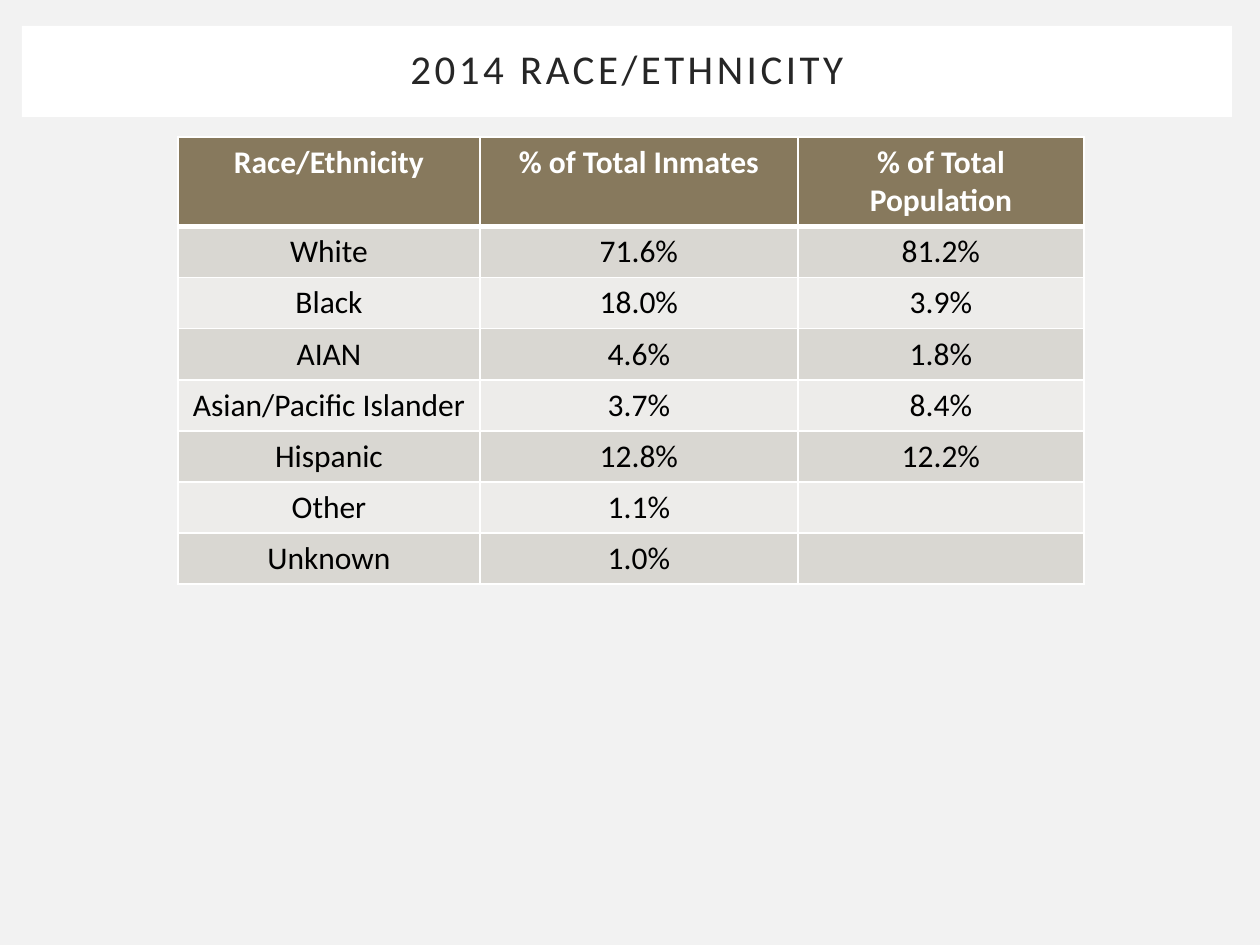
import pptx
import pptx.dml.color
import pptx.enum.shapes
import pptx.enum.text
import pptx.oxml
import pptx.oxml.ns
import pptx.util

RGBColor = pptx.dml.color.RGBColor
BACKGROUND = RGBColor(0xF2, 0xF2, 0xF2)
WHITE = RGBColor(0xFF, 0xFF, 0xFF)
BLACK = RGBColor(0x00, 0x00, 0x00)
TITLE_INK = RGBColor(0x26, 0x26, 0x26)
HEADER_FILL = RGBColor(0x87, 0x79, 0x5D)
BAND_FILLS = (RGBColor(0xD9, 0xD7, 0xD2), RGBColor(0xED, 0xEC, 0xEA))

PX_PER_INCH = 126
SLIDE_WIDTH, SLIDE_HEIGHT = 1260, 945
FONT = "Calibri"

RACE_SHARES = [
    ("Race/Ethnicity", "% of Total Inmates", "% of Total Population"),
    ("White", "71.6%", "81.2%"),
    ("Black", "18.0%", "3.9%"),
    ("AIAN", "4.6%", "1.8%"),
    ("Asian/Pacific Islander", "3.7%", "8.4%"),
    ("Hispanic", "12.8%", "12.2%"),
    ("Other", "1.1%", ""),
    ("Unknown", "1.0%", ""),
]
COLUMN_WIDTHS = (302, 318, 286)
ROW_HEIGHT = 51


def px(length):
    return pptx.util.Emu(round(length * 914400 / PX_PER_INCH))


def write_text(frame, text, size=18, color=BLACK, bold=False, line_spacing=None, tracking=None):
    paragraph = frame.paragraphs[0]
    paragraph.alignment = pptx.enum.text.PP_ALIGN.CENTER
    if line_spacing:
        paragraph.line_spacing = line_spacing
    run = paragraph.add_run()
    run.text = text
    run.font.name = FONT
    run.font.size = pptx.util.Pt(size)
    run.font.bold = bold
    run.font.color.rgb = color
    if tracking:
        run.font._element.set("spc", str(tracking * 100))


def set_borders(cell, bottom=1):
    """Draw white cell edges; widths are in points."""
    properties = cell._tc.get_or_add_tcPr()
    edges = (("lnL", 1), ("lnR", 1), ("lnT", 1), ("lnB", bottom))
    for position, (edge, width) in enumerate(edges):
        line = pptx.oxml.parse_xml(
            f'<a:{edge} {pptx.oxml.ns.nsdecls("a")} w="{pptx.util.Pt(width)}">'
            f'<a:solidFill><a:srgbClr val="{WHITE}"/></a:solidFill></a:{edge}>'
        )
        properties.insert(position, line)


def add_title_band(slide, left, top, width, height):
    band = slide.shapes.add_shape(
        pptx.enum.shapes.MSO_SHAPE.RECTANGLE, px(left), px(top), px(width), px(height)
    )
    band.shadow.inherit = False
    band.fill.solid()
    band.fill.fore_color.rgb = WHITE
    band.line.fill.background()
    frame = band.text_frame
    frame.word_wrap = True
    frame.vertical_anchor = pptx.enum.text.MSO_ANCHOR.MIDDLE
    frame.margin_left = frame.margin_right = px(25)
    frame.margin_top = frame.margin_bottom = px(25)
    write_text(frame, "2014 RACE/ETHNICITY", size=23.4, color=TITLE_INK,
               line_spacing=0.9, tracking=2)


def add_share_table(slide, left, top, width, height):
    holder = slide.shapes.add_table(
        len(RACE_SHARES), len(COLUMN_WIDTHS), px(left), px(top), px(width), px(height)
    )
    table = holder.table
    for column, column_width in zip(table.columns, COLUMN_WIDTHS):
        column.width = px(column_width)
    for row_index, shares in enumerate(RACE_SHARES):
        is_header = row_index == 0
        table.rows[row_index].height = px(ROW_HEIGHT)
        for column_index, text in enumerate(shares):
            cell = table.cell(row_index, column_index)
            cell.fill.solid()
            cell.fill.fore_color.rgb = HEADER_FILL if is_header else BAND_FILLS[(row_index - 1) % 2]
            set_borders(cell, bottom=3 if is_header else 1)
            if text:
                write_text(cell.text_frame, text, color=WHITE if is_header else BLACK,
                           bold=is_header)
    # The header wraps to two lines, so the frame is taller than its nominal rows
    holder.height = px(height)


def main():
    presentation = pptx.Presentation()
    presentation.slide_width = px(SLIDE_WIDTH)
    presentation.slide_height = px(SLIDE_HEIGHT)
    slide = presentation.slides.add_slide(presentation.slide_layouts[6])
    slide.background.fill.solid()
    slide.background.fill.fore_color.rgb = BACKGROUND

    add_title_band(slide, 22, 26, 1210, 91)
    add_share_table(slide, 178, 137, sum(COLUMN_WIDTHS), 446)
    presentation.save("out.pptx")


if __name__ == "__main__":
    main()
